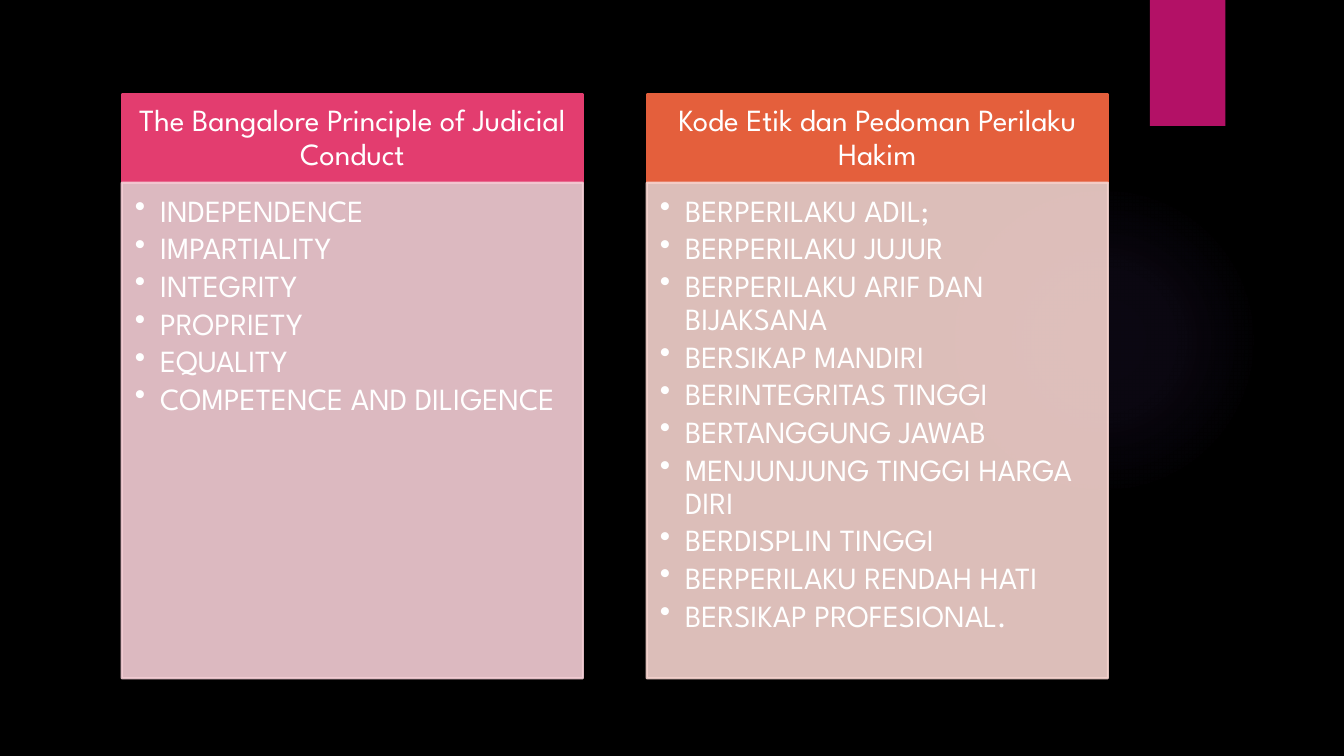
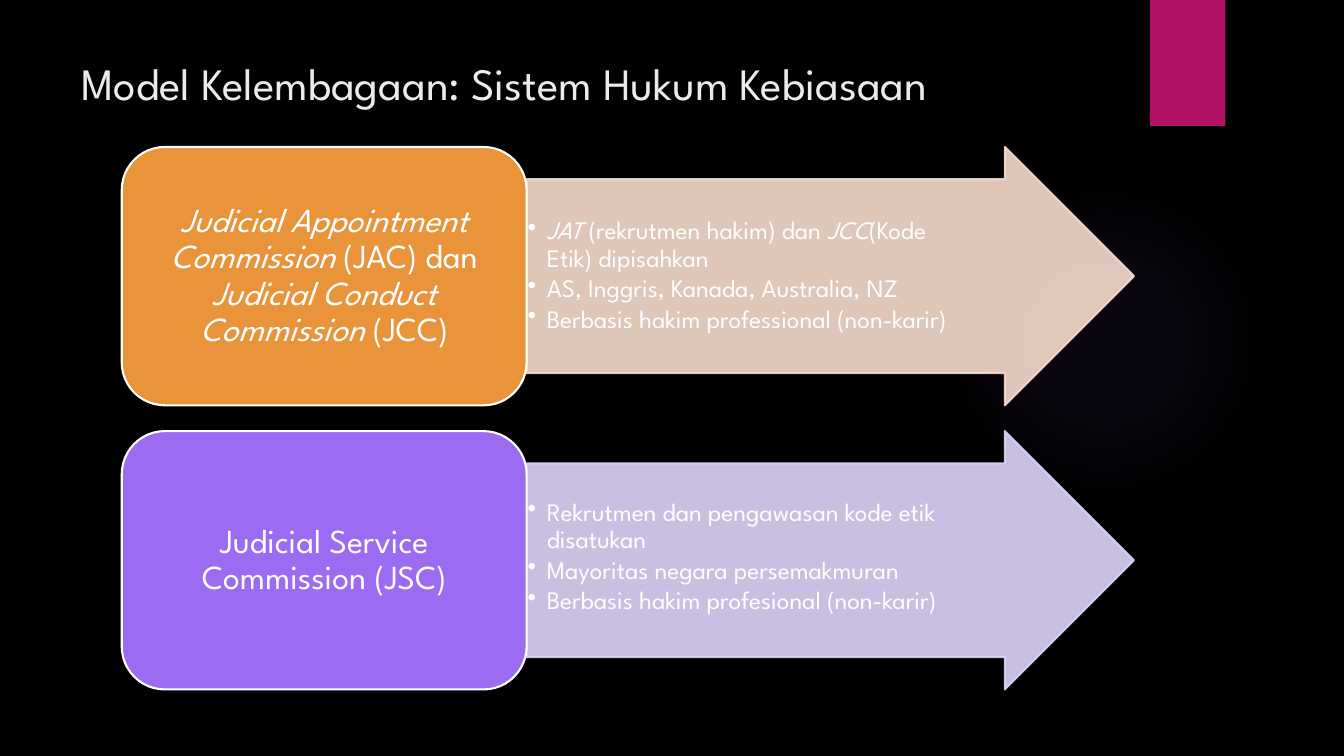
from dataclasses import dataclass

from lxml import etree
from pptx import Presentation
from pptx import util as u
from pptx.dml.color import RGBColor
from pptx.enum import shapes, text
from pptx.oxml import ns

Shape = shapes.MSO_SHAPE
Align = text.PP_ALIGN
Anchor = text.MSO_ANCHOR


# Theme: colours, type sizes (points) and line width
@dataclass(frozen=True)
class Theme:
    font: str = "League Spartan"
    back: str = "000000"
    tab: str = "B31166"
    violet: str = "9B6BF2"
    white: str = "FFFFFF"
    title_color: str = "EBEBEB"
    title: int = 32
    label: int = 24
    card: int = 22
    detail: int = 18
    line: float = 1.5
    tint_opacity: int = 90


@dataclass(frozen=True)
class Box:
    """Place and size in grid cells."""
    x: float
    y: float
    w: float
    h: float


@dataclass(frozen=True)
class Card:
    heading: str
    items: tuple[str, ...]
    color: str
    tint: str


@dataclass(frozen=True)
class Model:
    label: str
    items: tuple[str, ...]
    color: str
    tint: str
    bottom: float = 0.01


T = Theme()

# Grid of 160 columns by 90 rows
WIDTH, HEIGHT = u.Inches(13.333), u.Inches(7.5)
COL, ROW = WIDTH / 160, HEIGHT / 90
LEFT = 14.5


def place(b: Box) -> tuple[int, ...]:
    return tuple(round(v) for v in (b.x * COL, b.y * ROW, b.w * COL, b.h * ROW))


# Drawing helpers
def set_opacity(fill, percent: int) -> None:
    color = fill._xPr.find(".//" + ns.qn("a:srgbClr"))
    etree.SubElement(color, ns.qn("a:alpha"), val=str(percent * 1000))


def add_box(s, kind, box: Box, fill: str, line: str | None = None,
            opacity: int = 100):
    sp = s.shapes.add_shape(kind, *place(box))
    sp.shadow.inherit = False
    sp.fill.solid()
    sp.fill.fore_color.rgb = RGBColor.from_string(fill)
    if line is None:
        sp.line.fill.background()
    else:
        sp.line.color.rgb = RGBColor.from_string(line)
        sp.line.width = u.Pt(T.line)
    if opacity < 100:
        set_opacity(sp.fill, opacity)
        if line is not None:
            set_opacity(sp.line.fill, opacity)
    return sp


def write(sp, *lines: str, size: int, color: str = T.white, align=Align.CENTER,
          anchor=Anchor.MIDDLE, insets=(0.1, 0.05, 0.1, 0.05),
          indent: float = 0, spacing: float = 0.9) -> None:
    """Write one paragraph a line; *stars* mark italics, an indent adds bullets."""
    tf = sp.text_frame
    tf.word_wrap = True
    tf.vertical_anchor = anchor
    (tf.margin_left, tf.margin_top,
     tf.margin_right, tf.margin_bottom) = map(u.Inches, insets)
    for i, line in enumerate(lines):
        p = tf.add_paragraph() if i else tf.paragraphs[0]
        p.alignment = align
        p.line_spacing = spacing
        if indent:
            p.space_after = u.Pt(round(size * 0.14, 1))
            ppr = p._p.get_or_add_pPr()
            ppr.set("marL", str(u.Inches(indent)))
            ppr.set("indent", str(-u.Inches(indent)))
            etree.SubElement(ppr, ns.qn("a:buChar"), char="•")
        for j, part in enumerate(line.split("*")):
            if part:
                r = p.add_run()
                r.text = part
                r.font.name = T.font
                r.font.size = u.Pt(size)
                r.font.italic = j % 2 == 1
                r.font.color.rgb = RGBColor.from_string(color)


def add_glow(s, box: Box) -> None:
    sp = add_box(s, Shape.OVAL, box, T.violet)
    ppr = sp._element.spPr
    grad = etree.Element(ns.qn("a:gradFill"), rotWithShape="1")
    stops = etree.SubElement(grad, ns.qn("a:gsLst"))
    for pos, alpha in ((0, 7), (36, 6), (69, 0)):
        gs = etree.SubElement(stops, ns.qn("a:gs"), pos=str(pos * 1000))
        color = etree.SubElement(gs, ns.qn("a:srgbClr"), val=T.violet)
        etree.SubElement(color, ns.qn("a:alpha"), val=str(alpha * 1000))
    shade = etree.SubElement(grad, ns.qn("a:path"))
    shade.set("path", "circle")
    etree.SubElement(shade, ns.qn("a:fillToRect"),
                     l="50000", t="50000", r="50000", b="50000")
    ppr.replace(ppr.find(ns.qn("a:solidFill")), grad)


# Shared slide: background, glow, corner tab and optional title
def new_slide(prs, title: str = ""):
    s = prs.slides.add_slide(prs.slide_layouts[6])
    s.background.fill.solid()
    s.background.fill.fore_color.rgb = RGBColor.from_string(T.back)
    add_glow(s, Box(112.9, 22, 37, 37))
    add_box(s, Shape.RECTANGLE, Box(136.9, 0, 9, 15), T.tab)
    if title:
        sp = s.shapes.add_textbox(*place(Box(8.5, 6, 126.5, 10)))
        write(sp, title, size=T.title, color=T.title_color, align=Align.LEFT,
              anchor=Anchor.TOP, spacing=1.0)
    return s


# Two columns of heading and list
def add_card(s, column: int, card: Card) -> None:
    x, y, w, head_h = LEFT + 62.5 * column, 11.25, 54.9, 10.5
    head = add_box(s, Shape.RECTANGLE, Box(x, y, w, head_h), card.color, card.color)
    write(head, card.heading, size=T.card, insets=(0.17, 0.1, 0.17, 0.1))
    body = add_box(s, Shape.RECTANGLE, Box(x, y + head_h, w, 59), card.tint,
                   card.tint, T.tint_opacity)
    write(body, *card.items, size=T.card, align=Align.LEFT, anchor=Anchor.TOP,
          insets=(0.13, 0.13, 0.17, 0.19), indent=0.25)


# Rows of rounded label and arrow, split 40 to 60
def add_model(s, row: int, model: Model) -> None:
    total, h = 120.5, 30.75
    y = 17.5 + h * 1.1 * row
    label_w = total * 0.4
    arrow = add_box(s, Shape.RIGHT_ARROW, Box(LEFT + label_w, y, total * 0.6, h),
                    model.tint, model.tint, T.tint_opacity)
    arrow.adjustments[0], arrow.adjustments[1] = 0.75, 0.5
    write(arrow, *model.items, size=T.detail, align=Align.LEFT,
          insets=(0.01, 0.01, 0.65, model.bottom), indent=0.19)
    label = add_box(s, Shape.ROUNDED_RECTANGLE, Box(LEFT, y, label_w, h),
                    model.color, T.white)
    write(label, model.label, size=T.label)


# Content
CARDS = (
    Card("The Bangalore Principle of Judicial Conduct",
         ("INDEPENDENCE", "IMPARTIALITY", "INTEGRITY", "PROPRIETY", "EQUALITY",
          "COMPETENCE AND DILIGENCE"),
         "E33D6F", "F4CED5"),
    Card("Kode Etik dan Pedoman Perilaku Hakim",
         ("BERPERILAKU ADIL;", "BERPERILAKU JUJUR",
          "BERPERILAKU ARIF DAN BIJAKSANA", "BERSIKAP MANDIRI",
          "BERINTEGRITAS TINGGI", "BERTANGGUNG JAWAB",
          "MENJUNJUNG TINGGI HARGA DIRI", "BERDISPLIN TINGGI",
          "BERPERILAKU RENDAH HATI", "BERSIKAP PROFESIONAL."),
         "E45F3C", "F5D3CE"),
)
MODELS = (
    Model("*Judicial Appointment Commission* (JAC) dan "
          "*Judicial Conduct Commission *(JCC)",
          ("*JAT *(rekrutmen hakim) dan *JCC*(Kode Etik) dipisahkan",
           "AS, Inggris, Kanada, Australia, NZ",
           "Berbasis hakim professional (non-karir)"),
          "E9943A", "F7DCCE"),
    Model("Judicial Service Commission (JSC)",
          ("Rekrutmen dan pengawasan kode etik disatukan",
           "Mayoritas negara persemakmuran",
           "Berbasis hakim profesional (non-karir)"),
          T.violet, "DED4FA", bottom=0.07),
)


def main() -> None:
    prs = Presentation()
    prs.slide_width, prs.slide_height = WIDTH, HEIGHT
    s = new_slide(prs)
    for column, card in enumerate(CARDS):
        add_card(s, column, card)
    s = new_slide(prs, "Model Kelembagaan: Sistem Hukum Kebiasaan")
    for row, model in enumerate(MODELS):
        add_model(s, row, model)
    prs.save("out.pptx")


if __name__ == "__main__":
    main()
